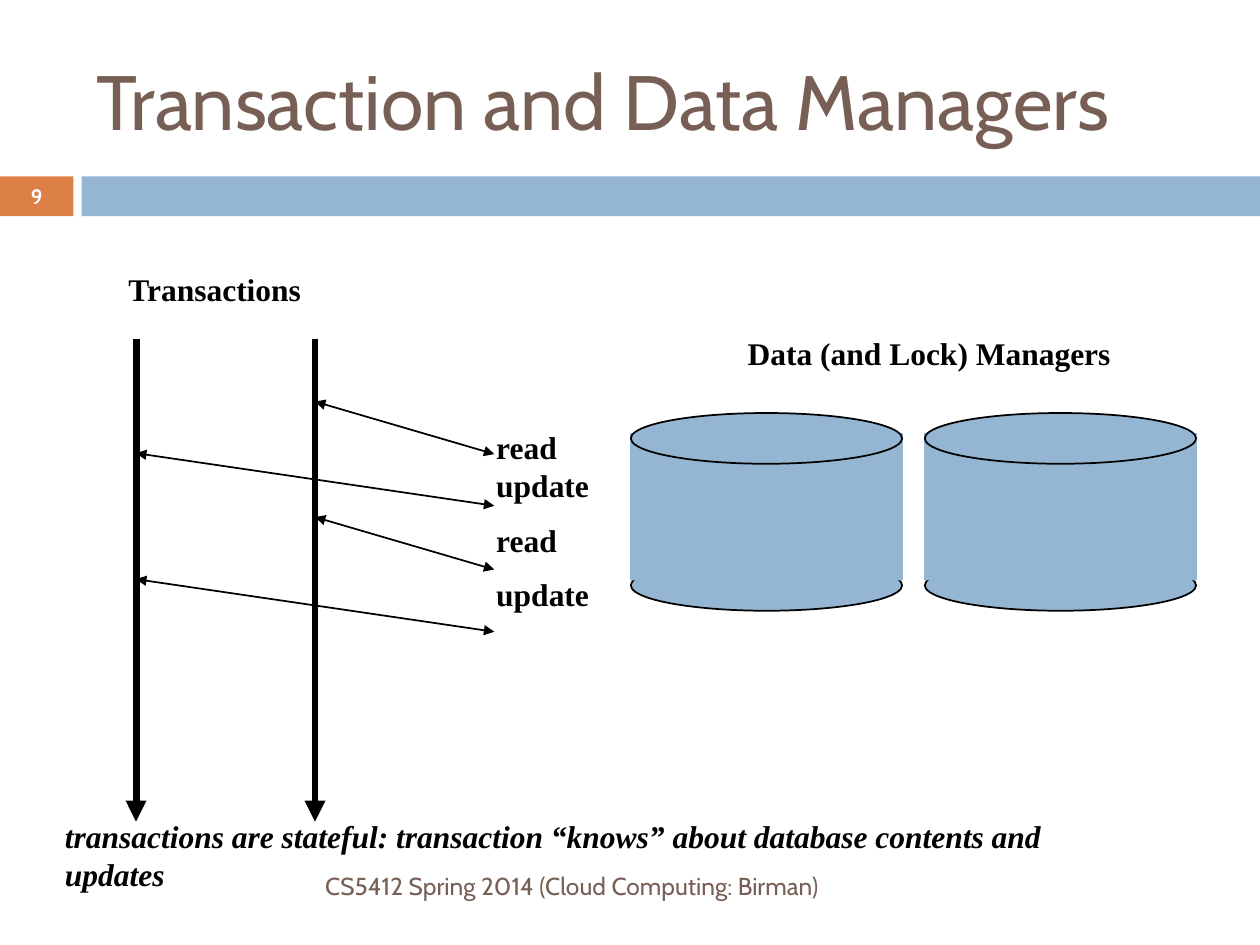
from pptx import Presentation
from pptx.dml.color import RGBColor
from pptx.enum.shapes import MSO_CONNECTOR, MSO_SHAPE
from pptx.enum.text import MSO_ANCHOR, MSO_AUTO_SIZE, PP_ALIGN
from pptx.oxml.ns import qn
from pptx.util import Pt
from lxml.etree import SubElement

BROWN = RGBColor(0x77, 0x5F, 0x55)
ORANGE = RGBColor(0xDD, 0x80, 0x47)
BLUE = RGBColor(0x94, 0xB6, 0xD2)
BLACK = RGBColor(0, 0, 0)
WHITE = RGBColor(0xFF, 0xFF, 0xFF)
SERIF = "Times New Roman"
SANS = "Cabin"


def add_block(shapes, kind, box, fill, outlined=False):
    block = shapes.add_shape(kind, *map(Pt, box))
    block.shadow.inherit = False
    block.fill.solid()
    block.fill.fore_color.rgb = fill
    if outlined:
        block.line.color.rgb = BLACK
        block.line.width = Pt(1)
    else:
        block.line.fill.background()


def add_arrow(shapes, start, end, width, ends):
    arrow = shapes.add_connector(MSO_CONNECTOR.STRAIGHT, *map(Pt, start + end))
    arrow.line.color.rgb = BLACK
    arrow.line.width = Pt(width)
    line = arrow.line._get_or_add_ln()
    for end_tag in ends:
        SubElement(line, qn(end_tag), type="triangle")
    SubElement(arrow._element.spPr, qn("a:effectLst"))


def write_run(paragraph, text, font, size, color, bold=False, italic=False):
    run = paragraph.add_run()
    run.text = text
    run.font.name = font
    run.font.size = Pt(size)
    run.font.color.rgb = color
    run.font.bold = bold
    run.font.italic = italic


def add_text(shapes, box, paragraphs, align, font=SERIF, size=18, color=BLACK,
             bold=True, italic=False, anchor=MSO_ANCHOR.TOP):
    frame = shapes.add_textbox(*map(Pt, box)).text_frame
    frame.word_wrap = True
    frame.auto_size = MSO_AUTO_SIZE.NONE
    frame.vertical_anchor = anchor
    for index, lines in enumerate(paragraphs):
        paragraph = frame.add_paragraph() if index else frame.paragraphs[0]
        paragraph.alignment = align
        if index:
            paragraph.space_before = Pt(9.7)
        for row, line in enumerate(lines.split("\n")):
            if row:
                paragraph.add_line_break()
            write_run(paragraph, line, font, size, color, bold, italic)


def add_header(slide, box):
    left, top, width, height = box
    band_top, band_height, number_width, band_left = top + 82.8, 22.8, 42, 46.6
    add_block(slide.shapes, MSO_SHAPE.RECTANGLE,
              (0, band_top, number_width, band_height), ORANGE)
    add_block(slide.shapes, MSO_SHAPE.RECTANGLE,
              (band_left, band_top, 720 - band_left, band_height), BLUE)
    add_text(slide.shapes, (0, band_top, number_width, band_height), ["9"],
             PP_ALIGN.CENTER, SANS, 11.9, WHITE, anchor=MSO_ANCHOR.MIDDLE)

    title = slide.shapes.title
    title.left, title.top, title.width, title.height = map(Pt, box)
    title.text_frame.vertical_anchor = MSO_ANCHOR.MIDDLE
    heading = title.text_frame.paragraphs[0]
    heading.alignment = PP_ALIGN.LEFT
    write_run(heading, "Transaction and Data Managers", SANS, 44, BROWN)


def add_transactions(slide, box):
    left, top, width, height = box
    first, second, calls = left + 41.75, left + 144, left + 246.5
    add_text(slide.shapes, (left, top, 173.5, 36), ["Transactions"], PP_ALIGN.CENTER)
    for timeline in (first, second):
        add_arrow(slide.shapes, (timeline, top + 42.5), (timeline, top + height),
                  4, ["a:tailEnd"])
    for timeline, offset in ((second, 78.5), (second, 144.5), (first, 108), (first, 180)):
        add_arrow(slide.shapes, (timeline, top + offset), (calls, top + offset + 30),
                  1, ["a:headEnd", "a:tailEnd"])
    add_text(slide.shapes, (calls - 6, top + 90, 119.5, 150.5),
             ["read\nupdate", "read", "update"], PP_ALIGN.LEFT)


def add_cylinder(slide, box):
    left, top, width, height = box
    cap = 29
    cylinder = slide.shapes.add_group_shape().shapes
    add_block(cylinder, MSO_SHAPE.OVAL,
              (left + 0.5, top + height - cap, width - 1, cap), BLUE, True)
    add_block(cylinder, MSO_SHAPE.RECTANGLE,
              (left, top + 11.5, width, 84.2), BLUE)
    add_block(cylinder, MSO_SHAPE.OVAL,
              (left + 0.5, top, width - 1, cap), BLUE, True)


def add_managers(slide, box):
    left, top, width, height = box
    add_text(slide.shapes, (left, top, width, 36),
             ["Data (and Lock) Managers"], PP_ALIGN.CENTER)
    for index in range(2):
        add_cylinder(slide, (left + 168 * index, top + 48.5, 156, height - 48.5))


def add_closing(slide, box):
    left, top, width, height = box
    add_text(slide.shapes, box,
             ["transactions are stateful: transaction “knows” about database "
              "contents and updates"], PP_ALIGN.LEFT, italic=True)
    add_text(slide.shapes, (48, top + 28, 427, 29),
             ["CS5412 Spring 2014 (Cloud Computing: Birman)"], PP_ALIGN.RIGHT,
             SANS, 14, BROWN, bold=False, anchor=MSO_ANCHOR.MIDDLE)


def main():
    deck = Presentation()
    deck.slide_width, deck.slide_height = Pt(720), Pt(540)
    slide = deck.slides.add_slide(deck.slide_layouts[5])
    add_header(slide, (48, 18, 642, 78))
    add_managers(slide, (360, 187.5, 342, 161.5))
    add_transactions(slide, (36, 151, 360, 318.5))
    add_closing(slide, (30, 463.5, 600, 65))
    deck.save("out.pptx")


if __name__ == "__main__":
    main()
